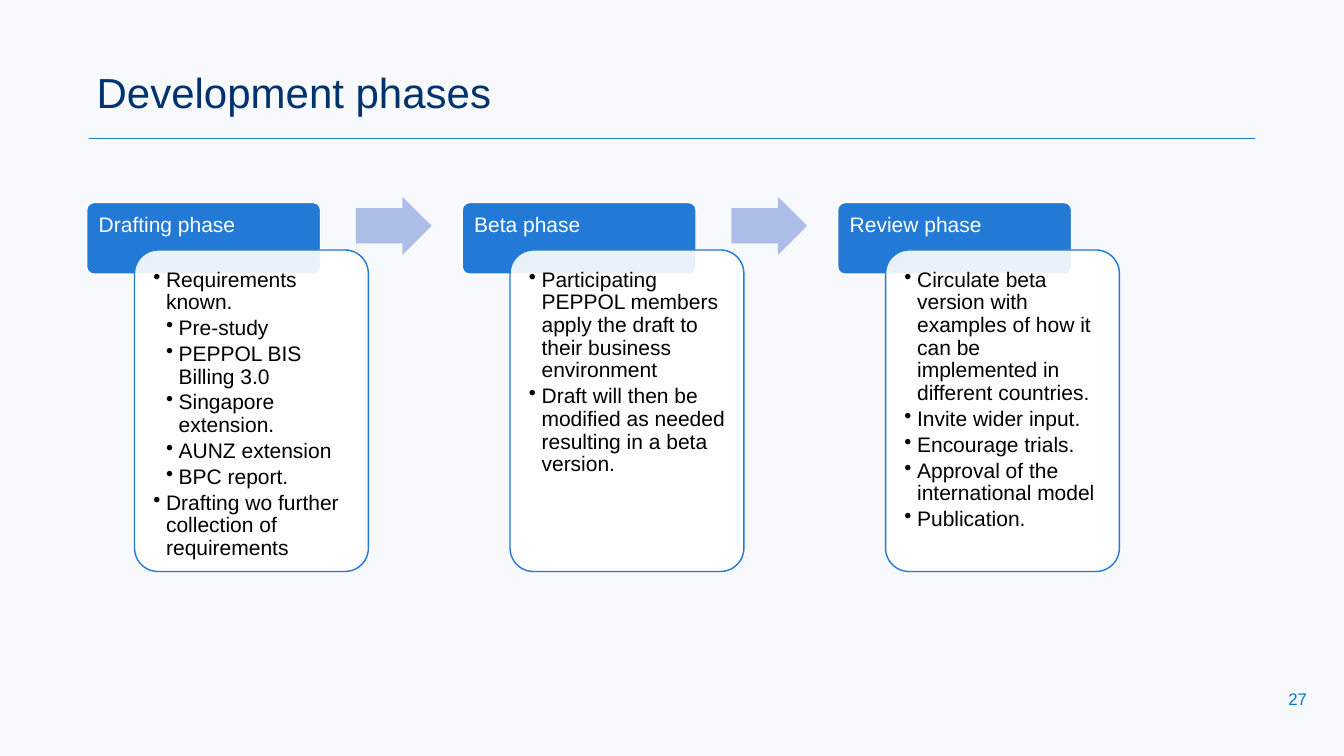
from dataclasses import dataclass

from lxml import etree
from pptx import Presentation
from pptx.dml.color import RGBColor
from pptx.enum.shapes import MSO_CONNECTOR, MSO_SHAPE
from pptx.enum.text import MSO_ANCHOR, PP_ALIGN
from pptx.oxml.ns import qn
from pptx.util import Inches, Pt

ROUNDED = MSO_SHAPE.ROUNDED_RECTANGLE
ARROW = MSO_SHAPE.RIGHT_ARROW
STRAIGHT = MSO_CONNECTOR.STRAIGHT
TOP, MIDDLE = MSO_ANCHOR.TOP, MSO_ANCHOR.MIDDLE
LEFT, CENTER = PP_ALIGN.LEFT, PP_ALIGN.CENTER

SLIDE_WIDTH, SLIDE_HEIGHT = Inches(13.33), Inches(7.5)


@dataclass(frozen=True)
class Theme:
    font: str = "Arial"
    background: str = "F7F9FC"
    title: str = "00326D"
    accent: str = "2279D6"
    arrow: str = "ACBEE8"
    number: str = "007AD7"
    white: str = "FFFFFF"
    black: str = "000000"
    title_size: int = 30
    body_size: int = 15
    number_size: int = 12
    hanging: float = 0.125


THEME = Theme()

# Shares of the slide's width and height, in percent
PHASE_LEFT, PHASE_PITCH = 6.45, 27.94
BOX_WIDTH = 17.4
HEADER_TOP, HEADER_HEIGHT = 26.8, 9.47
CARD_SHIFT, CARD_TOP, CARD_HEIGHT = 3.56, 33.07, 42.53
ARROW_SHIFT, ARROW_TOP, ARROW_WIDTH, ARROW_HEIGHT = 20.03, 26, 5.63, 7.73

# Each phase: heading, then (bullet level, text)
PHASES = [
    ("Drafting phase", [
        (1, "Requirements known."),
        (2, "Pre-study"),
        (2, "PEPPOL BIS Billing 3.0"),
        (2, "Singapore extension."),
        (2, "AUNZ extension"),
        (2, "BPC report."),
        (1, "Drafting wo further collection of requirements"),
    ]),
    ("Beta phase", [
        (1, "Participating PEPPOL members apply the draft to their business environment"),
        (1, "Draft will then be modified as needed resulting in a beta version."),
    ]),
    ("Review phase", [
        (1, "Circulate beta version with examples of how it can be implemented "
            "in different countries."),
        (1, "Invite wider input."),
        (1, "Encourage trials."),
        (1, "Approval of the international model"),
        (1, "Publication."),
    ]),
]


def across(share):
    return int(SLIDE_WIDTH * share / 100)


def down(share):
    return int(SLIDE_HEIGHT * share / 100)


def place(left, top, width, height):
    return across(left), down(top), across(width), down(height)


def color(value):
    return RGBColor.from_string(value)


def set_bullet(paragraph, level):
    paragraph.level = level
    properties = paragraph._p.get_or_add_pPr()
    properties.set("marL", str(Inches(THEME.hanging * level)))
    properties.set("indent", str(-Inches(THEME.hanging)))
    etree.SubElement(properties, qn("a:buChar")).set("char", "•")


def write(paragraph, text, size, text_color, align=LEFT, space_after=0):
    paragraph.alignment = align
    paragraph.line_spacing = 0.9
    paragraph.space_before = Pt(0)
    paragraph.space_after = Pt(space_after)
    run = paragraph.add_run()
    run.text = text
    run.font.name = THEME.font
    run.font.size = Pt(size)
    run.font.color.rgb = color(text_color)


def prepare_frame(shape, anchor, inset):
    frame = shape.text_frame
    frame.word_wrap = True
    frame.vertical_anchor = anchor
    frame.margin_left = frame.margin_right = Inches(inset)
    frame.margin_top = frame.margin_bottom = Inches(inset)
    return frame


def add_label(slide, box, text, size, text_color, align=LEFT):
    shape = slide.shapes.add_textbox(*place(*box))
    frame = prepare_frame(shape, MIDDLE, 0.1)
    write(frame.paragraphs[0], text, size, text_color, align)


def add_block(slide, kind, box, fill, line=None):
    shape = slide.shapes.add_shape(kind, *place(*box))
    shape.shadow.inherit = False
    shape.fill.solid()
    shape.fill.fore_color.rgb = color(fill)
    if line:
        shape.line.color.rgb = color(line)
        shape.line.width = Pt(1)
    else:
        shape.line.fill.background()
    return shape


def add_rule(slide, left, right, top):
    rule = slide.shapes.add_connector(
        STRAIGHT, across(left), down(top), across(right), down(top))
    rule.line.color.rgb = color(THEME.accent)
    rule.line.width = Pt(0.5)
    etree.SubElement(rule._element.spPr, qn("a:effectLst"))


def add_header(slide, left, text):
    box = (left, HEADER_TOP, BOX_WIDTH, HEADER_HEIGHT)
    header = add_block(slide, ROUNDED, box, THEME.accent, THEME.white)
    header.adjustments[0] = 0.1
    frame = prepare_frame(header, TOP, 0.1)
    write(frame.paragraphs[0], text, THEME.body_size, THEME.white)


def add_card(slide, left, bullets):
    """Add the slightly transparent card that overlaps its header."""
    box = (left + CARD_SHIFT, CARD_TOP, BOX_WIDTH, CARD_HEIGHT)
    card = add_block(slide, ROUNDED, box, THEME.white, THEME.accent)
    card.adjustments[0] = 0.1
    fill_color = card._element.spPr.find(qn("a:solidFill"))[0]
    etree.SubElement(fill_color, qn("a:alpha")).set("val", "90000")
    frame = prepare_frame(card, TOP, 0.12)
    for index, (level, text) in enumerate(bullets):
        paragraph = frame.add_paragraph() if index else frame.paragraphs[0]
        set_bullet(paragraph, level)
        write(paragraph, text, THEME.body_size, THEME.black,
              space_after=0.15 * THEME.body_size)


def add_arrow(slide, left):
    box = (left + ARROW_SHIFT, ARROW_TOP, ARROW_WIDTH, ARROW_HEIGHT)
    arrow = add_block(slide, ARROW, box, THEME.arrow)
    arrow.adjustments[0] = 0.6
    arrow.adjustments[1] = 0.5


def main():
    presentation = Presentation()
    presentation.slide_width, presentation.slide_height = SLIDE_WIDTH, SLIDE_HEIGHT
    slide = presentation.slides.add_slide(presentation.slide_layouts[6])
    slide.background.fill.solid()
    slide.background.fill.fore_color.rgb = color(THEME.background)

    add_rule(slide, 6.6, 93.4, 18.27)
    add_label(slide, (6.45, 8.53, 69.84, 8.13), "Development phases",
              THEME.title_size, THEME.title)
    add_label(slide, (94.9, 90, 3.3, 5.33), "27",
              THEME.number_size, THEME.number, CENTER)

    for index, (heading, bullets) in enumerate(PHASES):
        left = PHASE_LEFT + index * PHASE_PITCH
        add_header(slide, left, heading)
        add_card(slide, left, bullets)
        if index < len(PHASES) - 1:
            add_arrow(slide, left)

    presentation.save("out.pptx")


if __name__ == "__main__":
    main()
